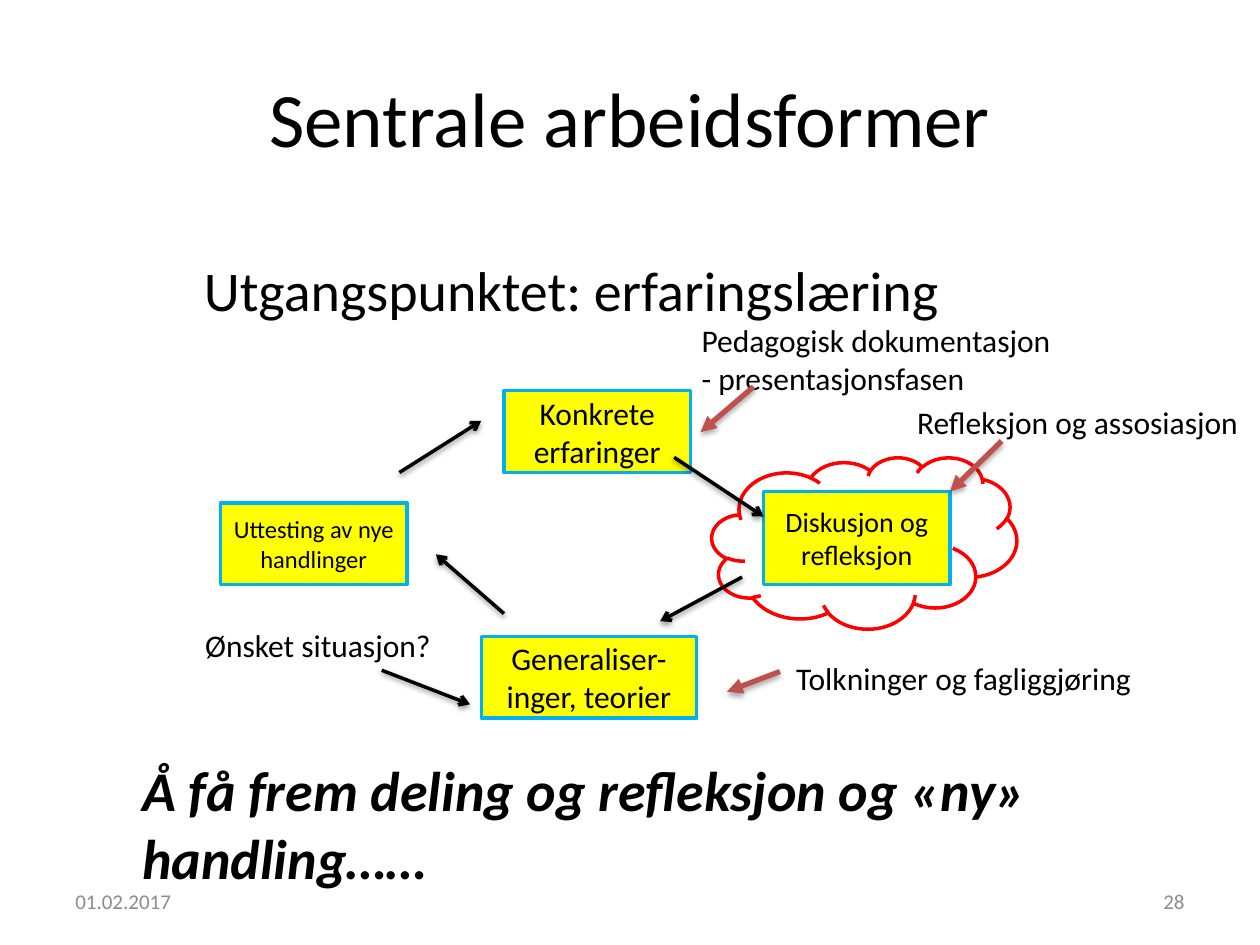
"""Build the slide on experiential learning as a cycle of four steps."""
import pptx
import pptx.dml.color
import pptx.enum.shapes
import pptx.enum.text
import pptx.oxml
import pptx.oxml.ns
import pptx.util

Inches = pptx.util.Inches
Pt = pptx.util.Pt
ALIGN = pptx.enum.text.PP_ALIGN
ANCHOR = pptx.enum.text.MSO_ANCHOR
SHAPE = pptx.enum.shapes.MSO_SHAPE

COLORS = {
    "text": "000000",
    "muted": "8C8C8C",
    "step": "FFFF00",
    "step_edge": "00B0F0",
    "cloud": "FF0000",
    "cycle": "000000",
    "input": "C0504D",
}
ARROW_STYLES = {
    "cycle": {"width": 2, "head": "arrow", "shadow": 38, "offset": 1.6},
    "input": {"width": 3, "head": "triangle", "shadow": 35, "offset": 1.8},
}
STEPS = [
    ("Konkrete erfaringer", (4, 3.1, 1.48, 0.65), 18),
    ("Uttesting av nye handlinger", (1.75, 3.99, 1.48, 0.65), 14),
    ("Diskusjon og refleksjon", (6.06, 3.9, 1.48, 0.74), 16),
    ("Generaliser-inger, teorier", (3.82, 5.05, 1.71, 0.65), 18),
]
ARROWS = [
    ("cycle", (5.35, 3.63), (6.06, 4.1)),
    ("cycle", (5.89, 4.58), (5.24, 4.93)),
    ("cycle", (4, 4.87), (3.46, 4.4)),
    ("cycle", (3.17, 3.75), (3.82, 3.34)),
    ("cycle", (3.03, 5.32), (3.73, 5.59)),
    ("input", (5.98, 3.07), (5.56, 3.43)),
    ("input", (7.95, 3.5), (7.54, 3.9)),
    ("input", (6.19, 5.33), (5.77, 5.49)),
]
NOTES = [
    ("Pedagogisk dokumentasjon\n- presentasjonsfasen", (5.47, 2.5, 3, 0.71)),
    ("Refleksjon og assosiasjon", (7.18, 3.15, 2.78, 0.4)),
    ("Tolkninger og fagliggjøring", (6.22, 5.18, 2.89, 0.4)),
    ("Ønsket situasjon?", (1.53, 4.92, 2.01, 0.4)),
]


def rgb(name):
    """Return the named colour."""
    return pptx.dml.color.RGBColor.from_string(COLORS[name])


def write(frame, text, size=18, color="text", align=ALIGN.LEFT,
          anchor=ANCHOR.TOP, wrap=True, bold=False, italic=False):
    """Fill a text frame, one paragraph for each line."""
    frame.word_wrap = wrap
    frame.vertical_anchor = anchor
    frame.text = text
    for paragraph in frame.paragraphs:
        paragraph.alignment = align
        font = paragraph.runs[0].font
        font.name, font.size = "Calibri", Pt(size)
        font.bold, font.italic = bold, italic
        font.color.rgb = rgb(color)


def add_text(slide, text, place, **style):
    """Add a text box."""
    box = slide.shapes.add_textbox(*map(Inches, place))
    write(box.text_frame, text, **style)


def add_outlined(slide, kind, place, edge):
    """Add an unfilled preset shape with a coloured edge."""
    shape = slide.shapes.add_shape(kind, *map(Inches, place))
    shape.shadow.inherit = False
    shape.fill.background()
    shape.line.color.rgb = rgb(edge)
    shape.line.width = Pt(2)
    return shape


def add_step(slide, text, place, size):
    """Add one step of the learning cycle."""
    step = add_outlined(slide, SHAPE.RECTANGLE, place, "step_edge")
    step.fill.solid()
    step.fill.fore_color.rgb = rgb("step")
    write(step.text_frame, text, size=size, align=ALIGN.CENTER, anchor=ANCHOR.MIDDLE)


def add_arrow(slide, kind, start, end):
    """Add a straight arrow with a soft shadow below it."""
    style = ARROW_STYLES[kind]
    arrow = slide.shapes.add_connector(
        pptx.enum.shapes.MSO_CONNECTOR.STRAIGHT, *map(Inches, start + end))
    arrow.line.color.rgb = rgb(kind)
    arrow.line.width = Pt(style["width"])
    namespace = pptx.oxml.ns.nsdecls("a")
    arrow.line._get_or_add_ln().append(pptx.oxml.parse_xml(
        f'<a:tailEnd {namespace} type="{style["head"]}"/>'))
    arrow._element.spPr.append(pptx.oxml.parse_xml(
        f'<a:effectLst {namespace}><a:outerShdw blurRad="{Pt(3.1)}" '
        f'dist="{Pt(style["offset"])}" dir="5400000" rotWithShape="0">'
        f'<a:srgbClr val="000000"><a:alpha val="{style["shadow"] * 1000}"/>'
        '</a:srgbClr></a:outerShdw></a:effectLst>'))


def main():
    """Build and save the slide."""
    deck = pptx.Presentation()
    deck.slide_width, deck.slide_height = Inches(10), Inches(7.5)
    slide = deck.slides.add_slide(deck.slide_layouts[6])

    add_text(slide, "Sentrale arbeidsformer", (0.5, 0.3, 9, 1.25),
             size=44, align=ALIGN.CENTER, anchor=ANCHOR.MIDDLE)
    add_text(slide, "Utgangspunktet: erfaringslæring", (1.52, 1.98, 6.73, 3.84), size=32)
    for step in STEPS:
        add_step(slide, *step)
    add_outlined(slide, SHAPE.CLOUD, (5.65, 3.63, 2.42, 1.36), "cloud")
    for text, place in NOTES:
        add_text(slide, text, place, wrap=False)
    for arrow in ARROWS:
        add_arrow(slide, *arrow)
    add_text(slide, "Å få frem deling og refleksjon og «ny» handling……",
             (1.03, 5.95, 7.56, 1.18), size=32, bold=True, italic=True)
    footer = {"size": 12, "color": "muted", "anchor": ANCHOR.MIDDLE}
    add_text(slide, "01.02.2017", (0.5, 6.95, 2.33, 0.4), **footer)
    add_text(slide, "28", (7.17, 6.95, 2.33, 0.4), align=ALIGN.RIGHT, **footer)
    deck.save("out.pptx")


if __name__ == "__main__":
    main()
